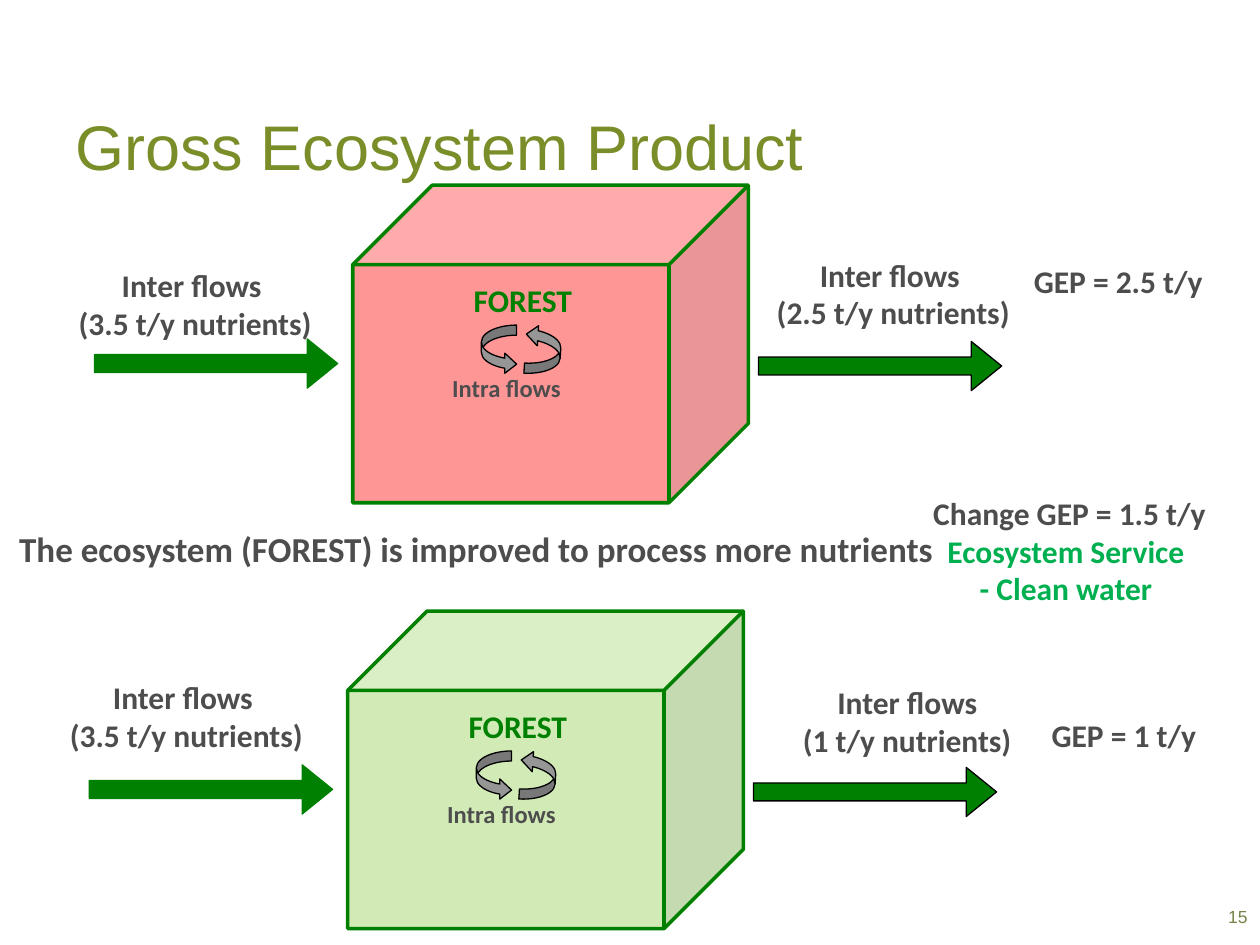
from lxml import etree
from pptx import Presentation
from pptx.dml.color import RGBColor
from pptx.enum import shapes, text
from pptx.oxml import ns
from pptx.util import Inches, Pt

OLIVE = RGBColor(0x79, 0x8D, 0x29)
MOSS = RGBColor(0x75, 0x84, 0x48)
GREEN = RGBColor(0x00, 0x80, 0x00)
SERVICE = RGBColor(0x00, 0xB0, 0x50)
GRAY = RGBColor(0x4D, 0x4D, 0x4D)
SILVER = RGBColor(0x96, 0x96, 0x96)
BLACK = RGBColor(0, 0, 0)
RED = RGBColor(0xFF, 0, 0)
LIME = RGBColor(0x92, 0xD0, 0x50)

# Content: each ecosystem has a cube origin, a colour and labels as (lines, area)
ECOSYSTEMS = [
    {"origin": (2.8, 1.47), "color": RED, "labels": [
        (["Inter flows ", "(3.5 t/y nutrients)"], (0.35, 2.06, 2.4, 0.71)),
        (["Inter flows ", "(2.5 t/y nutrients)"], (5.83, 1.98, 2.52, 0.71)),
        (["GEP = 2.5 t/y"], (8.07, 2.03, 1.61, 0.4))]},
    {"origin": (2.76, 4.85), "color": LIME, "labels": [
        (["Inter flows ", "(3.5 t/y nutrients)"], (0.28, 5.33, 2.4, 0.71)),
        (["Inter flows", "(1 t/y nutrients)"], (5.94, 5.37, 2.52, 0.71)),
        (["GEP = 1 t/y"], (8.23, 5.63, 1.38, 0.4))]},
]
IMPROVEMENT = "The ecosystem (FOREST) is improved to process more nutrients"
CHANGE = [" Change GEP = 1.5 t/y", "Ecosystem Service", "- Clean water"]

# Parts of an ecosystem, measured from its cube's corner
CUBE_SIZE = (3.14, 2.52)
FLOW_SIZE = (1.93, 0.39)
FLOWS = [((-2.05, 1.22), GREEN), ((3.22, 1.24), BLACK)]
CYCLE_SIZE = (0.28, 0.39)
CYCLE = [((1.02, 1.11), 0), ((1.37, 1.11), 183.5)]
CUBE_LABELS = [("FOREST", (0.62, 0.71, 1.46, 0.4), 18, GREEN),
               ("Intra flows", (0, 1.44, 2.44, 0.34), 14, GRAY)]

deck = Presentation()
deck.slide_width, deck.slide_height = Inches(10), Inches(7.5)
page = deck.slides.add_slide(deck.slide_layouts[6])


def add_label(lines, area, size=18, color=GRAY, font="Calibri", bold=True,
              align=text.PP_ALIGN.CENTER):
    box = page.shapes.add_textbox(*map(Inches, area))
    frame = box.text_frame
    frame.word_wrap = True
    frame.text = "\n".join(lines)
    for para in frame.paragraphs:
        para.alignment = align
        for span in para.runs:
            span.font.name, span.font.size, span.font.bold = font, Pt(size), bold
            span.font.color.rgb = color
    return frame


def add_part(kind, place, size, fill, line, width=0.75, adjust=(), alpha=None):
    part = page.shapes.add_shape(kind, *map(Inches, (*place, *size)))
    part.shadow.inherit = False
    for index, value in enumerate(adjust):
        part.adjustments[index] = value
    part.fill.solid()
    part.fill.fore_color.rgb = fill
    part.line.color.rgb, part.line.width = line, Pt(width)
    if alpha is not None:
        color = part.fill._xPr.find(ns.qn("a:solidFill"))[0]
        etree.SubElement(color, ns.qn("a:alpha"), val=str(alpha * 1000))
    return part


def add_ecosystem(origin, color, labels):
    def from_cube(offset):
        return origin[0] + offset[0], origin[1] + offset[1]

    add_part(shapes.MSO_SHAPE.CUBE, origin, CUBE_SIZE, color, GREEN, 2, (0.25,), 41)
    for offset, line in FLOWS:
        add_part(shapes.MSO_SHAPE.RIGHT_ARROW, from_cube(offset), FLOW_SIZE,
                 GREEN, line, adjust=(0.366, 0.617))
    for offset, turn in CYCLE:
        arrow = add_part(shapes.MSO_SHAPE.CURVED_RIGHT_ARROW, from_cube(offset),
                         CYCLE_SIZE, SILVER, BLACK, adjust=(0.286, 0.571, 0.333))
        arrow.rotation = turn
    for words, area, size, ink in CUBE_LABELS:
        add_label([words], (*from_cube(area), *area[2:]), size, ink)
    for lines, area in labels:
        add_label(lines, area)


# Title and page number
title = add_label(["Gross Ecosystem Product"], (0.5, 0.6, 9, 1.1), 36, OLIVE,
                  "Arial", False, text.PP_ALIGN.LEFT)
title.vertical_anchor = text.MSO_ANCHOR.MIDDLE
add_label(["15"], (8.93, 7.14, 1.07, 0.24), 10, MOSS, "Arial", False,
          text.PP_ALIGN.RIGHT)

# Ecosystem before and after the improvement
for ecosystem in ECOSYSTEMS:
    add_ecosystem(**ecosystem)

# What changes between the two
add_label([IMPROVEMENT], (0, 4.14, 7.56, 0.44), 20)
change = add_label(CHANGE, (7.2, 3.87, 2.52, 1.01))
for para in change.paragraphs[1:]:
    para.runs[0].font.color.rgb = SERVICE

deck.save("out.pptx")
